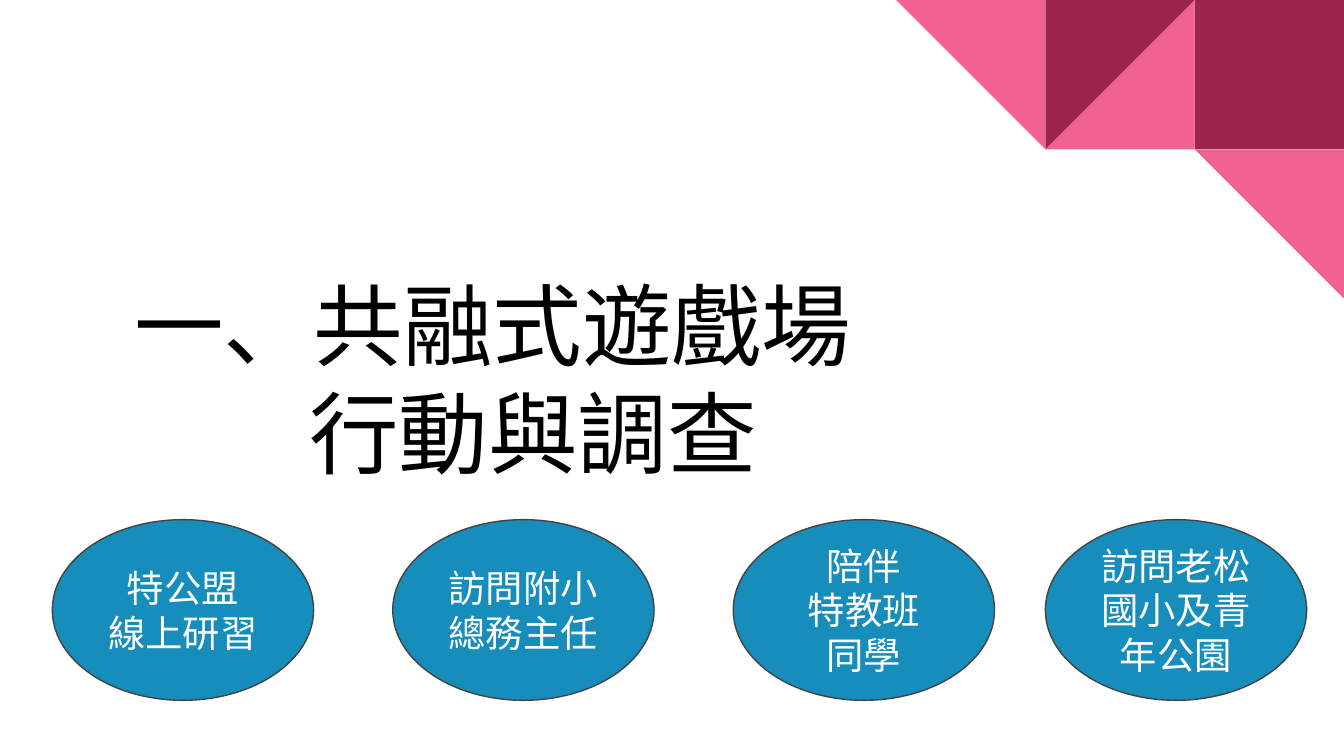
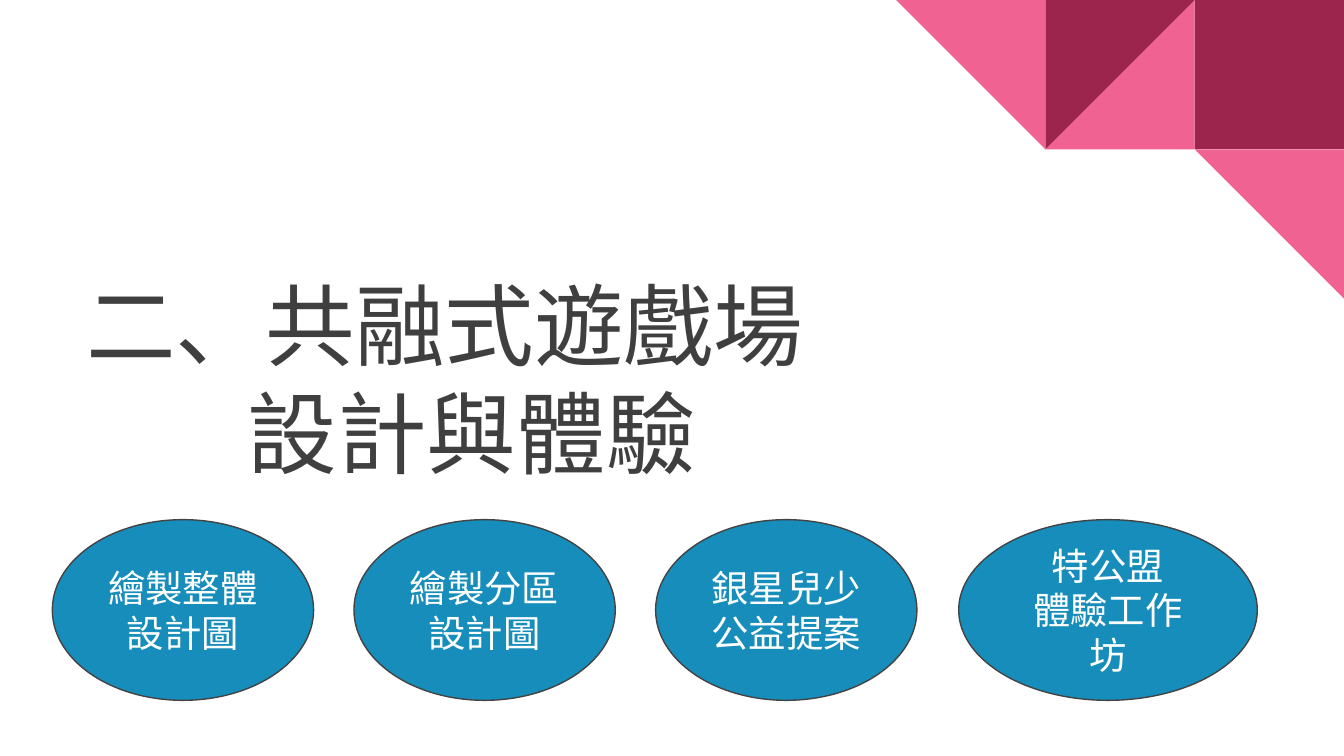
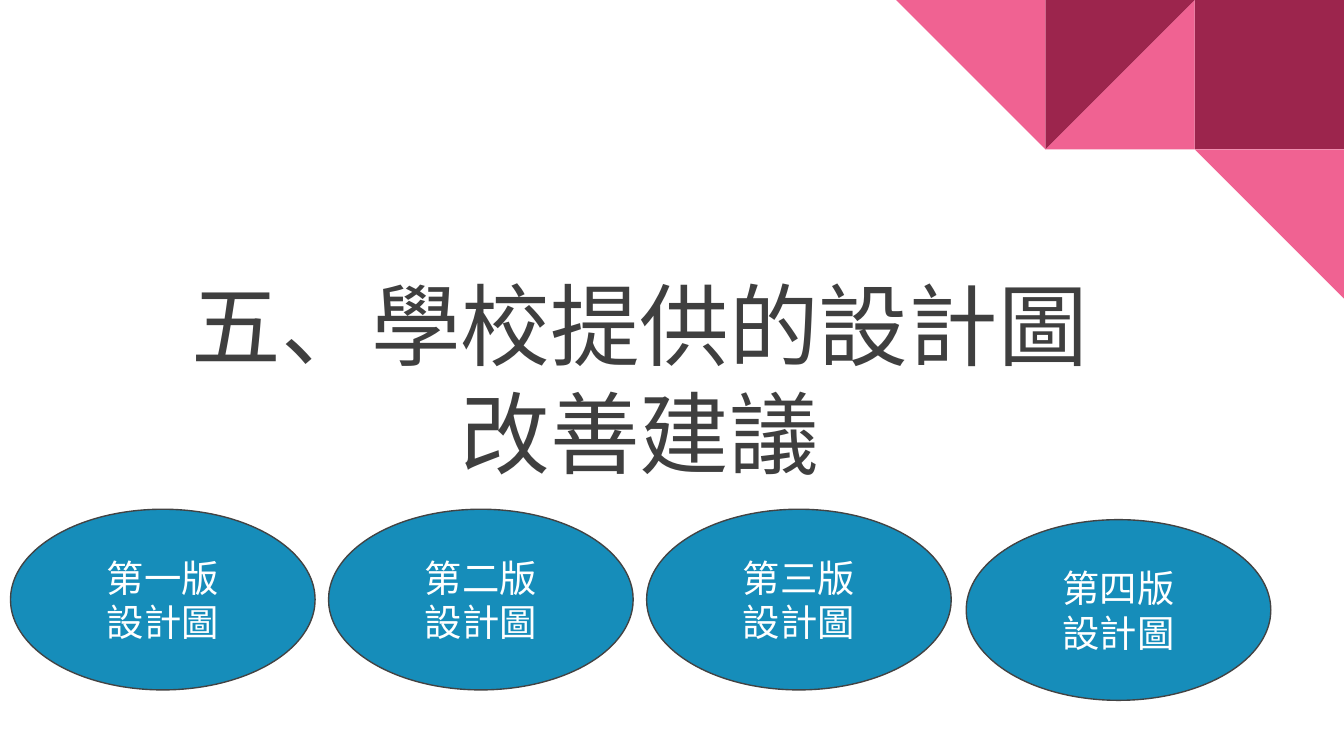
import pptx
import pptx.util
import pptx.dml.color
import pptx.enum.shapes
import pptx.enum.text
import pptx.oxml.ns
import lxml.etree

COLORS = {
    "wine": "9C254D",
    "pink": "F06292",
    "blue": "168DBA",
    "outline": "434343",
    "black": "000000",
    "gray": "3F3F3F",
    "white": "FFFFFF",
}
FONT = "Noto Sans CJK TC"
SHAPE = pptx.enum.shapes.MSO_SHAPE
ALIGN = pptx.enum.text.PP_ALIGN

deck = pptx.Presentation()
deck.slide_width = pptx.util.Inches(10)
deck.slide_height = pptx.util.Inches(5.625)
TILE = deck.slide_width / 9


def add_box(page, kind, column, row, columns, rows, fill=None):
    place = [round(TILE * length) for length in (column, row, columns, rows)]
    if kind is None:
        return page.shapes.add_textbox(*place)
    box = page.shapes.add_shape(kind, *place)
    box.shadow.inherit = False
    box.fill.solid()
    box.fill.fore_color.rgb = pptx.dml.color.RGBColor.from_string(COLORS[fill])
    box.line.fill.background()
    return box


def write(box, lines, size, color, align, indent=0):
    frame = box.text_frame
    frame.word_wrap = True
    frame.vertical_anchor = pptx.enum.text.MSO_ANCHOR.MIDDLE
    frame.margin_left = frame.margin_right = pptx.util.Inches(0.1)
    frame.margin_top = frame.margin_bottom = pptx.util.Inches(0.1)
    for number, line in enumerate(lines):
        para = frame.add_paragraph() if number else frame.paragraphs[0]
        para.text = line
        para.alignment = align
        para.line_spacing = pptx.util.Pt(size * 1.2)
        if number and indent:
            para._p.get_or_add_pPr().set("marL", str(pptx.util.Inches(indent)))
        para.font.name = FONT
        para.font.size = pptx.util.Pt(size)
        para.font.color.rgb = pptx.dml.color.RGBColor.from_string(COLORS[color])
        latin = para.font._element.find(pptx.oxml.ns.qn("a:latin"))
        east_asian = lxml.etree.Element(pptx.oxml.ns.qn("a:ea"), typeface=FONT)
        latin.addnext(east_asian)


CORNER = [
    (SHAPE.RECTANGLE, 8, 0, "wine", 0, False),
    (SHAPE.RIGHT_TRIANGLE, 7, 0, "pink", 0, True),
    (SHAPE.RIGHT_TRIANGLE, 7, 0, "wine", 180, True),
    (SHAPE.RIGHT_TRIANGLE, 6, 0, "pink", 180, False),
    (SHAPE.RIGHT_TRIANGLE, 8, 1, "pink", 180, False),
]
OVAL_ROW = 3.48
OVAL_ROWS = 1.21

SECTIONS = [
    {
        "title": ["一、共融式遊戲場", "行動與調查"],
        "title_left": 0.35, "title_width": 5.9, "title_color": "black",
        "align": ALIGN.CENTER, "indent": 0.6,
        "start": 0.35, "step": 2.28, "row": OVAL_ROW, "width": 1.75,
        "last": (7, 1.75),
        "topics": [["特公盟", "線上研習"], ["訪問附小", "總務主任"],
                   ["陪伴", "特教班", "同學"], ["訪問老松國小及青年公園"]],
    },
    {
        "title": ["二、共融式遊戲場", "設計與體驗"],
        "title_left": 0.49, "title_width": 5.53, "title_color": "gray",
        "align": ALIGN.LEFT, "indent": 1.2,
        "start": 0.35, "step": 2.02, "row": OVAL_ROW, "width": 1.75,
        "last": (6.42, 2),
        "topics": [["繪製整體設計圖"], ["繪製分區設計圖"],
                   ["銀星兒少公益提案"], ["特公盟", "體驗工作坊"]],
    },
    {
        "title": ["五、學校提供的設計圖\v改善建議"],
        "title_left": 0.49, "title_width": 7.59, "title_color": "gray",
        "align": ALIGN.CENTER, "indent": 0,
        "start": 0.07, "step": 2.13, "row": 3.41, "width": 2.04,
        "last": (6.47, 2.04),
        "topics": [[f"第{number}版", "設計圖"] for number in "一二三四"],
    },
]

for section in SECTIONS:
    page = deck.slides.add_slide(deck.slide_layouts[6])

    for kind, column, row, fill, rotation, mirrored in CORNER:
        tile = add_box(page, kind, column, row, 1, 1, fill)
        tile.rotation = rotation
        if mirrored:
            tile._element.spPr.get_or_add_xfrm().set("flipH", "1")

    title = add_box(page, None, section["title_left"], 0.52, section["title_width"], 4.02)
    write(title, section["title"], 48, section["title_color"], section["align"], section["indent"])

    for number, topic in enumerate(section["topics"]):
        column = section["start"] + number * section["step"]
        row, width = section["row"], section["width"]
        if number == len(section["topics"]) - 1:
            column, width = section["last"]
            row = OVAL_ROW
        oval = add_box(page, SHAPE.OVAL, column, row, width, OVAL_ROWS, "blue")
        oval.line.color.rgb = pptx.dml.color.RGBColor.from_string(COLORS["outline"])
        oval.line.width = pptx.util.Pt(0.75)
        write(oval, topic, 20, "white", ALIGN.CENTER)

deck.save("out.pptx")
